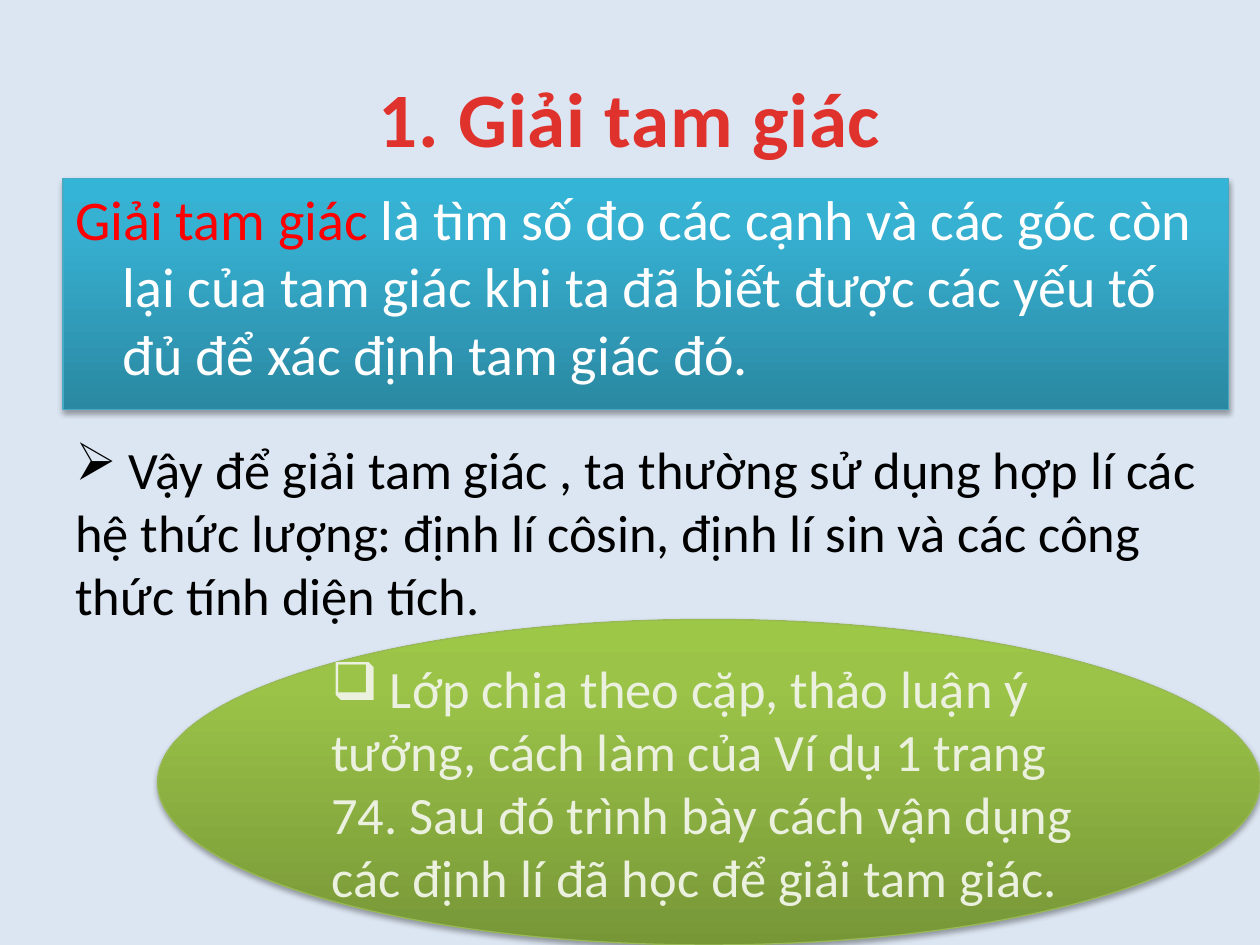
"""Build the slide on solving triangles."""
from dataclasses import dataclass
from typing import Optional

from lxml import etree
from pptx import Presentation
from pptx.dml.color import RGBColor
from pptx.enum.shapes import MSO_SHAPE
from pptx.enum.text import MSO_ANCHOR, PP_ALIGN
from pptx.oxml.ns import qn
from pptx.util import Pt

ELLIPSE, RECT = MSO_SHAPE.OVAL, MSO_SHAPE.RECTANGLE
TOP, MIDDLE = MSO_ANCHOR.TOP, MSO_ANCHOR.MIDDLE
LEFT, CENTER = PP_ALIGN.LEFT, PP_ALIGN.CENTER
TITLE_ONLY = 5


@dataclass(frozen=True)
class Theme:
    font: str = "Calibri"
    title_size: float = 44
    lead_size: float = 32
    body_size: float = 30
    background: str = "DCE6F2"
    title: tuple = ((25, "E0322D"), (100, "A2201C"))
    teal: tuple = ((0, "2A88A2"), (80, "37B1D2"), (100, "34B4D6"))
    teal_line: str = "46AAC5"
    green: tuple = ((0, "779737"), (80, "9BC348"), (100, "9DC746"))
    green_line: str = "98B955"
    key: str = "FF0000"
    light: str = "FFFFFF"
    pale: str = "EBF1DE"
    dark: str = "000000"


THEME = Theme()


@dataclass(frozen=True)
class Block:
    box: tuple
    runs: tuple
    size: float
    anchor: int = TOP
    shape: Optional[int] = None
    stops: tuple = ()
    line: str = ""
    bullet: str = ""
    hanging: float = 0
    before: int = 0


BLOCKS = (
    Block((90, 354, 630, 186),
          ((" Lớp chia theo cặp, thảo luận ý tưởng, cách làm của Ví dụ 1 trang 74. "
            "Sau đó trình bày cách vận dụng các định lí đã học để giải tam giác.",
            THEME.pale),),
          THEME.body_size, MIDDLE, ELLIPSE, THEME.green, THEME.green_line, "❑"),
    Block((36, 102, 666, 132),
          (("Giải tam giác ", THEME.key),
           ("là tìm số đo các cạnh và các góc còn lại của tam giác khi ta đã biết "
            "được các yếu tố đủ để xác định tam giác đó.", THEME.light)),
          THEME.lead_size, TOP, RECT, THEME.teal, THEME.teal_line,
          hanging=27, before=20),
    Block((36, 246, 684, 117),
          ((" Vậy để giải tam giác , ta thường sử dụng hợp lí các hệ thức lượng: "
            "định lí côsin, định lí sin và các công thức tính diện tích.",
            THEME.dark),),
          THEME.body_size, bullet="➢"),
)


def apply(obj, values: dict) -> None:
    for name, value in values.items():
        setattr(obj, name, value)


def add_node(parent, tag: str, **attrs):
    return etree.SubElement(parent, qn(tag), {k: str(v) for k, v in attrs.items()})


def set_gradient(fill, parent, stops: tuple, angle: float) -> None:
    fill.gradient()
    fill.gradient_angle = angle
    gs_list = parent.find(qn("a:gradFill")).find(qn("a:gsLst"))
    for gs in list(gs_list):
        gs_list.remove(gs)
    for position, color in stops:
        gs = add_node(gs_list, "a:gs", pos=position * 1000)
        add_node(gs, "a:srgbClr", val=color)


def add_shadow(sp) -> None:
    effects = add_node(sp._element.spPr, "a:effectLst")
    shadow = add_node(effects, "a:outerShdw", blurRad=Pt(3.1), dist=Pt(1.8),
                      dir=90 * 60000, rotWithShape=0)
    color = add_node(shadow, "a:srgbClr", val=THEME.dark)
    add_node(color, "a:alpha", val=35000)


def format_paragraph(p, block: Block) -> None:
    p.alignment = LEFT
    p_pr = p._p.get_or_add_pPr()
    if block.hanging:
        apply_indent = {"marL": Pt(block.hanging), "indent": -Pt(block.hanging)}
        for name, value in apply_indent.items():
            p_pr.set(name, str(value))
    if block.before:
        add_node(add_node(p_pr, "a:spcBef"), "a:spcPct", val=block.before * 1000)
    if block.bullet:
        add_node(p_pr, "a:buChar", char=block.bullet)


def add_block(s, block: Block) -> None:
    box = [Pt(v) for v in block.box]
    if block.shape is None:
        sp = s.shapes.add_textbox(*box)
    else:
        sp = s.shapes.add_shape(block.shape, *box)
        set_gradient(sp.fill, sp._element.spPr, block.stops, 90)
        sp.line.color.rgb = RGBColor.from_string(block.line)
        sp.line.width = Pt(0.75)
        add_shadow(sp)
    tf = sp.text_frame
    apply(tf, {"word_wrap": True, "vertical_anchor": block.anchor})
    p = tf.paragraphs[0]
    format_paragraph(p, block)
    for text, color in block.runs:
        r = p.add_run()
        r.text = text
        apply(r.font, {"name": THEME.font, "size": Pt(block.size)})
        r.font.color.rgb = RGBColor.from_string(color)


def set_title(s, text: str) -> None:
    sp = s.shapes.title
    apply(sp, {"left": Pt(36), "top": Pt(21.6), "width": Pt(648), "height": Pt(90)})
    sp.text_frame.vertical_anchor = MIDDLE
    p = sp.text_frame.paragraphs[0]
    p.alignment = CENTER
    r = p.add_run()
    r.text = text
    apply(r.font, {"name": THEME.font, "size": Pt(THEME.title_size), "bold": True})
    r_pr = r._r.get_or_add_rPr()
    r_pr.set("spc", "50")
    set_gradient(r.font.fill, r_pr, THEME.title, 270)


def main() -> None:
    prs = Presentation()
    apply(prs, {"slide_width": Pt(720), "slide_height": Pt(540)})
    s = prs.slides.add_slide(prs.slide_layouts[TITLE_ONLY])
    s.background.fill.solid()
    s.background.fill.fore_color.rgb = RGBColor.from_string(THEME.background)
    set_title(s, "1. Giải tam giác")
    for block in BLOCKS:
        add_block(s, block)
    prs.save("out.pptx")


if __name__ == "__main__":
    main()
